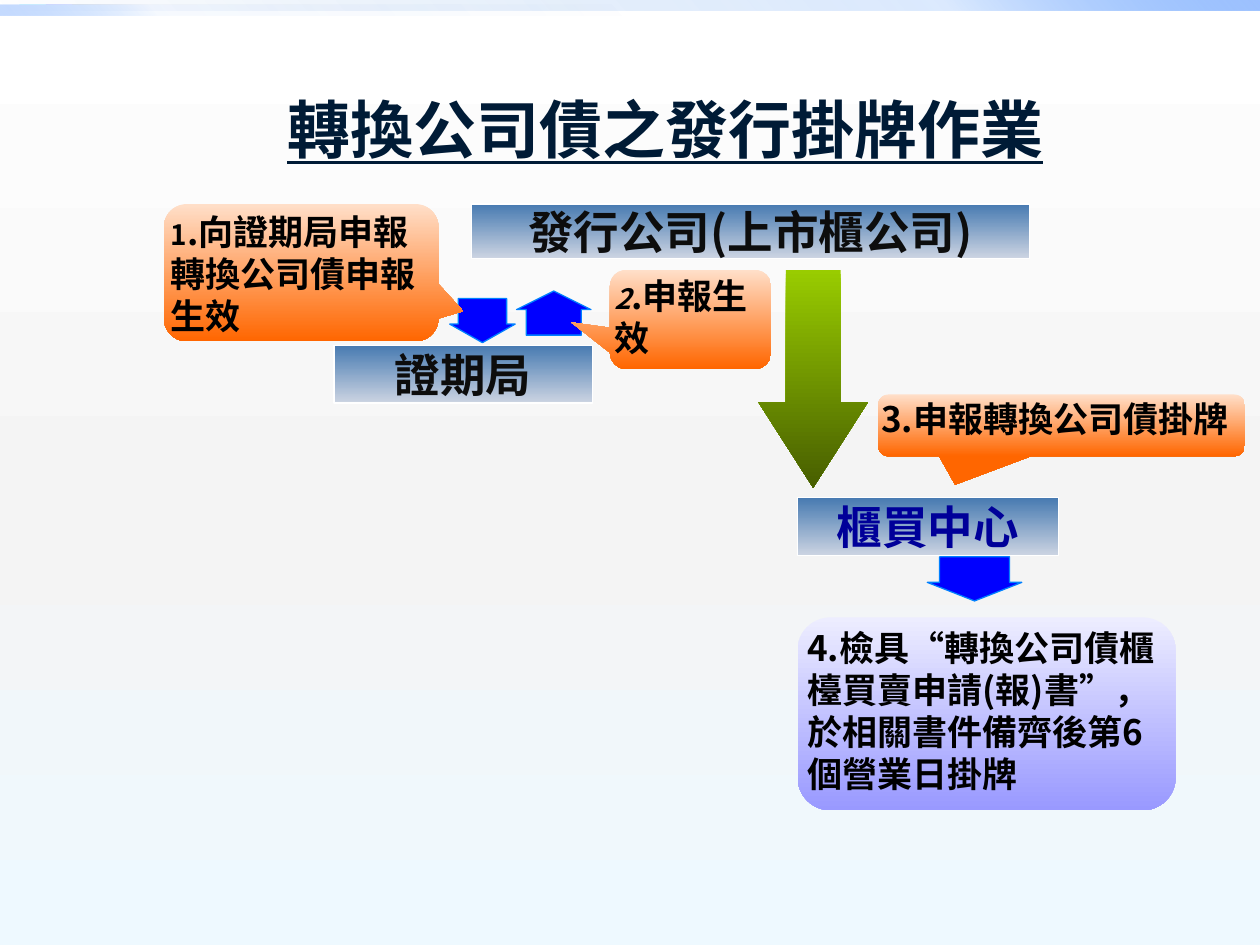
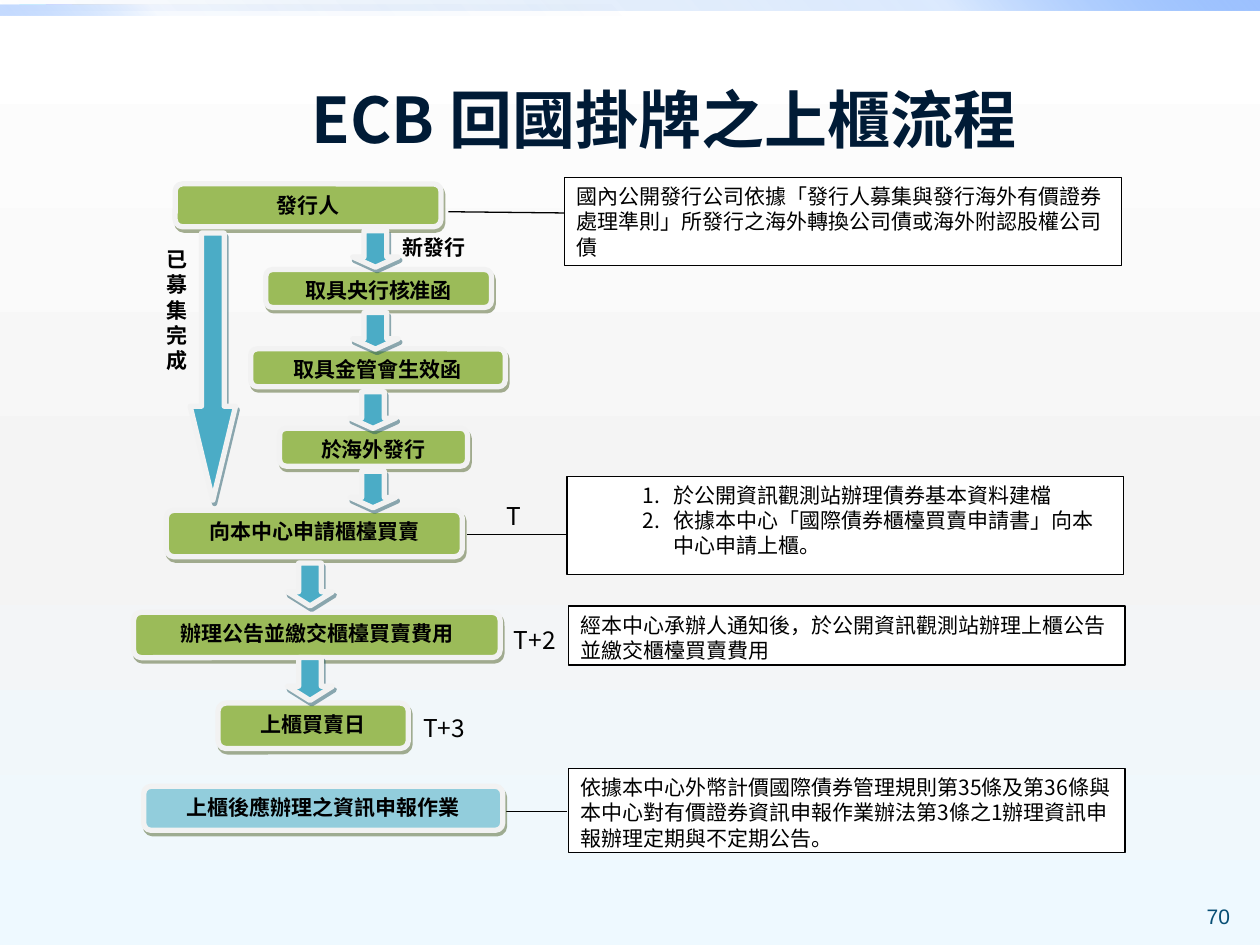
from lxml import etree
from pptx import Presentation
from pptx.dml.color import RGBColor
from pptx.enum import shapes, text
from pptx.oxml import ns
from pptx.util import Pt

FACE = "Noto Sans CJK SC"
NAVY, BLACK, WHITE = "001B36", "000000", "FFFFFF"
GREEN, TEAL, PALE, FRAME = "9BBB59", "4BACC6", "92CDDC", "F2F2F2"
STEEL = [(0, "477AB1"), (100, "CCD4E2")]
ORANGE = [(0, "FFDFC9"), (100, "FF6600")]
LILAC = [(0, "EDEDFF"), (100, "9999FF")]
OLIVE = [(0, "99CC00"), (100, "475E00")]
SKY = [(0, "FFFFFF"), (55, "F4F4F4"), (100, "EEF9FF")]
FORM = shapes.MSO_SHAPE
MID, TOP = text.MSO_ANCHOR.MIDDLE, text.MSO_ANCHOR.TOP
LEFT, MIDST = text.PP_ALIGN.LEFT, text.PP_ALIGN.CENTER
hue = RGBColor.from_string


def blend(owner, fill, stops, angle=90):
    """Fill with a linear gradient; a stop is (place, colour[, opacity])."""
    fill.background()
    blank = owner._element.xpath(".//a:noFill")[0]
    grad = etree.Element(ns.qn("a:gradFill"), rotWithShape="1")
    row = etree.SubElement(grad, ns.qn("a:gsLst"))
    for place, tint, *alpha in stops:
        stop = etree.SubElement(row, ns.qn("a:gs"), pos=str(place * 1000))
        clr = etree.SubElement(stop, ns.qn("a:srgbClr"), val=tint)
        for part in alpha:
            etree.SubElement(clr, ns.qn("a:alpha"), val=str(part * 1000))
    etree.SubElement(grad, ns.qn("a:lin"), ang=str(angle * 60000), scaled="0")
    blank.getparent().replace(blank, grad)


def put(slide, form, box, words="", fill=None, line=None, width=0.75, size=12,
        tint=BLACK, bold=False, align=LEFT, anchor=TOP, inset=None, angle=90,
        adj=(), shade=None, face=FACE):
    """Add a shape, or a text box if form is None; "|" parts runs."""
    spot = [Pt(v) for v in box]
    if form is None:
        item = slide.shapes.add_textbox(*spot)
    else:
        item = slide.shapes.add_shape(form, *spot)
        item.shadow.inherit = False
        for i, value in enumerate(adj):
            item.adjustments[i] = value
        if isinstance(fill, list):
            blend(item, item.fill, fill, angle)
        else:
            item.fill.solid()
            item.fill.fore_color.rgb = hue(fill)
        if line:
            item.line.color.rgb = hue(line)
            item.line.width = Pt(width)
        else:
            item.line.fill.background()
    if shade:
        glow = item._element.spPr.find(ns.qn("a:effectLst"))
        drop = etree.SubElement(glow, ns.qn("a:outerShdw"), dist=str(Pt(2.2)),
                                dir=str(63 * 60000), algn="ctr", rotWithShape="0")
        clr = etree.SubElement(drop, ns.qn("a:srgbClr"), val=shade)
        etree.SubElement(clr, ns.qn("a:alpha"), val="50000")
    if not words:
        return item
    frame = item.text_frame
    frame.word_wrap = True
    frame.vertical_anchor = anchor
    if inset is not None:
        frame.margin_left = frame.margin_right = Pt(inset)
        frame.margin_top = frame.margin_bottom = Pt(inset)
    for i, row in enumerate(words.split("\n")):
        para = frame.add_paragraph() if i else frame.paragraphs[0]
        para.alignment = align
        for part in row.split("|"):
            run = para.add_run()
            run.text = part
            font = run.font
            font.size, font.bold, font.name = Pt(size), bold, face
            font.color.rgb = hue(tint)
            etree.SubElement(run._r.rPr, ns.qn("a:ea"), typeface=face)
    return item


deck = Presentation()
deck.slide_width, deck.slide_height = Pt(720), Pt(540)

# Shared backdrop, top bands and title
pages = []
for name, box in [("轉換公司債之發行掛牌作業", (73.4, 28.1, 613.4, 90)),
                  ("ECB 回國掛牌之上櫃流程", (60.5, 33.1, 637.9, 68.4))]:
    page = deck.slides.add_slide(deck.slide_layouts[6])
    blend(page, page.background.fill, SKY)
    for band, angle, mid, end in [((0, 0, 720, 5.8), 315, 20, 100),
                                  ((0, 2.9, 360, 5.8), 135, 5, 60)]:
        put(page, FORM.RECTANGLE, band, angle=angle,
            fill=[(0, "0058B7", 0), (75, "4F95FF", mid), (100, "9EC2FF", end)])
    title = put(page, None, box, name, size=36, tint=NAVY, bold=True,
                align=MIDST, anchor=MID)
    pages.append((page, title))
(issue, head), (flow, _) = pages
head.text_frame.paragraphs[0].runs[0].font.underline = True

# Slide 1: parties
for words, box, tint in [
        ("發行公司(上市櫃公司)", (269.3, 116.6, 319, 31), "0D0D0D"),
        ("證期局", (190.8, 197.3, 147.6, 33.1), "0D0D0D"),
        ("櫃買中心", (455.8, 284.4, 149, 33.1), "000099")]:
    put(issue, FORM.RECTANGLE, box, words, STEEL, WHITE, size=26, tint=tint,
        bold=True, align=MIDST, anchor=MID, inset=0)

# Slide 1: arrows
for box, turn in [((257, 170.6, 37.4, 25.2), 0), ((295.2, 166.3, 42.5, 25.2), 180),
                  ((529.9, 318.2, 54, 25.2), 0)]:
    arrow = put(issue, FORM.DOWN_ARROW, box, fill="0000FF", line="0080FF",
                adj=(0.74, 0.42))
    arrow.rotation = turn
put(issue, FORM.DOWN_ARROW, (433.4, 154.1, 62.6, 124.6), fill=OLIVE, adj=(0.5, 0.78))

# Slide 1: numbered remarks
CALL = FORM.ROUNDED_RECTANGULAR_CALLOUT
notes = []
for form, words, box, fill, adj in [
        (CALL, "1|.向證期局申報\n轉換公司債申報生效", (93.6, 116.6, 157, 78.5),
         ORANGE, (0.59, 0.28, 0.17)),
        (CALL, "2|.申報生效", (348.5, 154.1, 92.2, 56.9), ORANGE, (-0.74, 0.03, 0.17)),
        (CALL, "3.申報轉換公司債掛牌", (501.8, 225.4, 209.5, 35.3),
         ORANGE, (-0.29, 0.96, 0.17)),
        (FORM.ROUNDED_RECTANGLE,
         "4.檢具“轉換公司債櫃檯買賣申請(報)書”，於相關書件備齊後第6個營業日掛牌",
         (455.8, 352.8, 216, 110.2), LILAC, (0.17,))]:
    notes.append(put(issue, form, box, words, fill, size=20, bold=True,
                     inset=0, adj=adj))
for note, slant in zip(notes[:2], (False, True)):
    font = note.text_frame.paragraphs[0].runs[0].font
    font.size, font.italic = Pt(16), slant

# Slide 2: explanations
for words, x, y, high in [
        ("國內公開發行公司依據「發行人募集與發行海外有價證券處理準則」所發行之海外轉換公司債"
         "或海外附認股權公司債", 322.6, 101.5, 50.4),
        ("於公開資訊觀測站辦理債券基本資料建檔\n"
         "依據本中心「國際債券櫃檯買賣申請書」向本中心申請上櫃。", 324, 272.2, 56.2),
        ("經本中心承辦人通知後，於公開資訊觀測站辦理上櫃公告並繳交櫃檯買賣費用",
         324.7, 346.3, 33.8),
        ("依據本中心外幣計價國際債券管理規則第35條及第36條與本中心對有價證券資訊申報作業辦法"
         "第3條之1辦理資訊申報辦理定期與不定期公告。", 324.7, 439.2, 48.2)]:
    note = put(flow, FORM.RECTANGLE, (x, y, 318.2, high), words, WHITE, BLACK)
    if "\n" in words:
        for para in note.text_frame.paragraphs:
            prop = para._p.get_or_add_pPr()
            prop.set("marL", str(Pt(54)))
            prop.set("indent", str(Pt(-18)))
            etree.SubElement(prop, ns.qn("a:buFont"), typeface="+mj-lt")
            etree.SubElement(prop, ns.qn("a:buAutoNum"), type="arabicPeriod")

# Slide 2: links to the explanations
for x1, y1, x2, y2 in [(256.3, 121, 322.6, 121.7), (267.1, 305.3, 324, 305.3),
                       (289.4, 463.7, 324, 463.7)]:
    link = flow.shapes.add_connector(shapes.MSO_CONNECTOR.STRAIGHT,
                                     Pt(x1), Pt(y1), Pt(x2), Pt(y2))
    link.line.color.rgb = hue(BLACK)
    link.line.width = Pt(0.75)
    etree.SubElement(link._element.spPr, ns.qn("a:effectLst"))

# Slide 2: steps
for words, box, fill in [
        ("發行人", (100.1, 105.1, 151.9, 24.5), GREEN),
        ("取具央行核准函", (151.9, 154.1, 128.9, 21.6), GREEN),
        ("取具金管會生效函", (143.3, 199.4, 145.4, 21.6), GREEN),
        ("於海外發行", (159.8, 244.8, 107.3, 21.6), GREEN),
        ("向本中心申請櫃檯買賣", (95, 291.6, 169.2, 26.6), GREEN),
        ("辦理公告並繳交櫃檯買賣費用", (76.3, 349.9, 209.5, 25.9), GREEN),
        ("上櫃買賣日", (124.6, 401.8, 108.7, 25.9), GREEN),
        ("上櫃後應辦理之資訊申報作業", (82.1, 449.3, 205.2, 25.2), PALE)]:
    put(flow, FORM.ROUNDED_RECTANGLE, box, words, fill, FRAME, 3, bold=True,
        align=MIDST, adj=(0.17,), shade="4E6128")

# Slide 2: arrows between steps
for x, y, high, tip in [
        (108.7, 133.2, 152.6, 2.07), (201.6, 131.8, 20.9, 0.28),
        (201.6, 178.6, 20.9, 0.28), (200.2, 223.9, 20.9, 0.28),
        (200.2, 269.3, 20.9, 0.28), (164.2, 321.8, 24.5, 0.33),
        (164.2, 375.8, 24.5, 0.33)]:
    put(flow, FORM.DOWN_ARROW, (x, y, 25.9, high), fill=TEAL, line=FRAME, width=3,
        adj=(0.5, tip), shade="205867")

# Slide 2: labels and page number
for words, box, size, bold in [
        ("T", (282.2, 283, 34.6, 17.3), 14, False),
        ("T+2", (286.6, 353.5, 46.1, 18.7), 14, False),
        ("T+3", (234.7, 403.9, 47.5, 20.9), 14, False),
        ("新發行", (223.2, 130.3, 57.6, 19.4), 12, True),
        ("已募集完成", (87.8, 137.5, 32.4, 86.4), 12, True)]:
    put(flow, None, box, words, size=size, bold=bold)
put(flow, None, (678.2, 496.8, 36, 37.4), "70", tint="064E74", align=MIDST,
    anchor=text.MSO_ANCHOR.BOTTOM, face="Arial")

deck.save("out.pptx")
